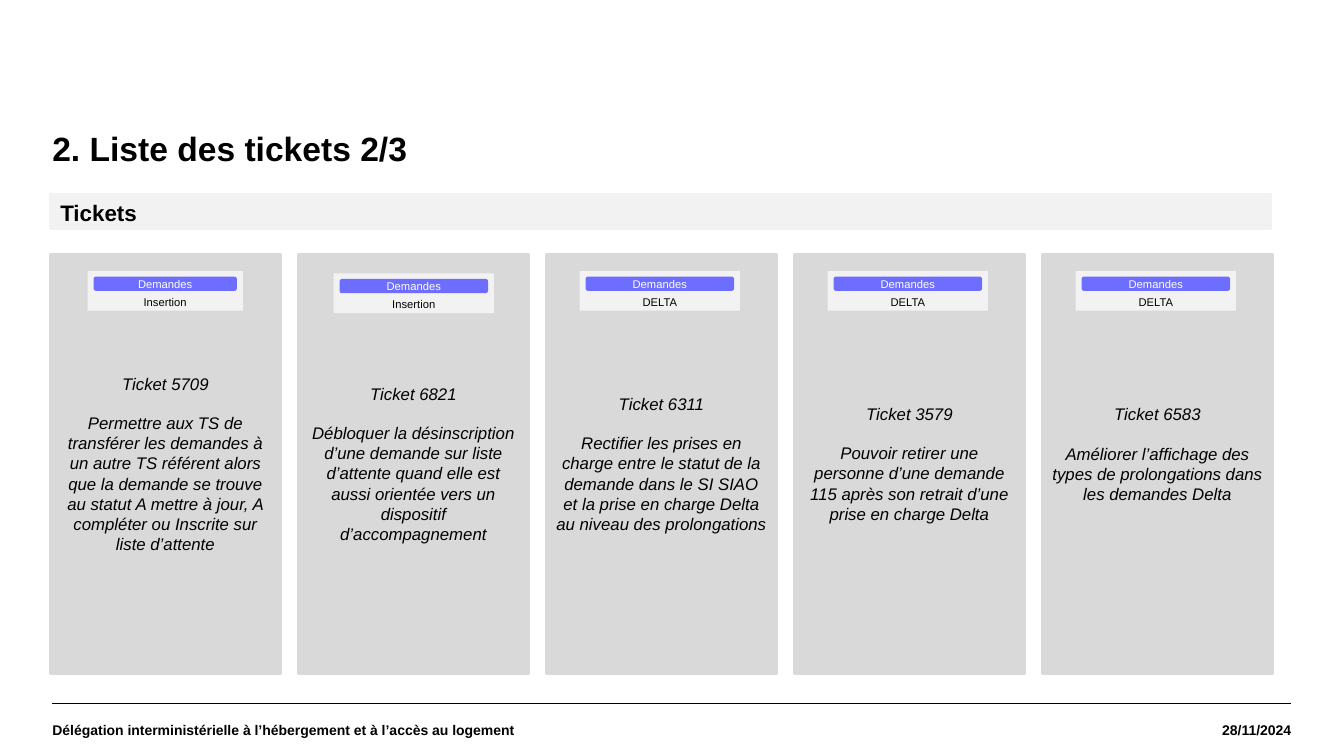
from dataclasses import dataclass

from lxml.etree import SubElement
from pptx import Presentation
from pptx.dml.color import RGBColor
from pptx.enum.shapes import MSO_CONNECTOR, MSO_SHAPE
from pptx.enum.text import MSO_ANCHOR as Anchor, PP_ALIGN as Align
from pptx.oxml.ns import qn
from pptx.util import Cm, Pt

COLORS = {
    "text": "000000",
    "white": "FFFFFF",
    "card": "D9D9D9",
    "band": "F2F2F2",
    "pill": "6D6DFF",
}
FONT = "Arial"
MARGIN = 1.32
RIGHT_EDGE = 32.54
CARD_LEFT, CARD_TOP, CARD_PITCH = 1.27, 6.4, 6.25
CARD_WIDTH, CARD_HEIGHT = 5.8, 10.57
FOOTER_TOP, FOOTER_HEIGHT = 17.73, 1.32
LINE_GAP = Pt(13.8)


@dataclass(frozen=True)
class Badge:
    label: str
    inset: float
    top: float
    width: float
    height: float = 1.0


@dataclass(frozen=True)
class Ticket:
    number: int
    summary: str
    badge: Badge
    bottom_inset: float = 0.13


DELTA = Badge("DELTA", 0.84, 6.83, 4.04)

TICKETS = [
    Ticket(
        5709,
        "Permettre aux TS de transférer les demandes à un autre TS référent alors que "
        "la demande se trouve au statut A mettre à jour, A compléter ou Inscrite sur "
        "liste d’attente",
        Badge("Insertion", 0.94, 6.83, 3.91),
    ),
    Ticket(
        6821,
        "Débloquer la désinscription d’une demande sur liste d’attente quand elle est "
        "aussi orientée vers un dispositif d’accompagnement",
        Badge("Insertion", 0.89, 6.89, 4.04),
    ),
    Ticket(
        6311,
        "Rectifier les prises en charge entre le statut de la demande dans le SI SIAO "
        "et la prise en charge Delta au niveau des prolongations",
        DELTA,
    ),
    Ticket(
        3579,
        "Pouvoir retirer une personne d’une demande 115 après son retrait d’une prise "
        "en charge Delta",
        DELTA,
    ),
    Ticket(
        6583,
        "Améliorer l’affichage des types de prolongations dans les demandes Delta",
        DELTA,
        bottom_inset=0.62,
    ),
]


def rgb(name: str) -> RGBColor:
    return RGBColor.from_string(COLORS[name])


def add_block(shapes, left: float, top: float, width: float, height: float,
              fill: str, kind=MSO_SHAPE.RECTANGLE, outlined: bool = False):
    block = shapes.add_shape(kind, Cm(left), Cm(top), Cm(width), Cm(height))
    block.shadow.inherit = False
    block.fill.solid()
    block.fill.fore_color.rgb = rgb(fill)
    if outlined:
        block.line.color.rgb = rgb(fill)
        block.line.width = Pt(2)
    else:
        block.line.fill.background()
    return block


def write(shape, lines: list[str], size: float, align=Align.LEFT, anchor=Anchor.TOP,
          color: str = "text", bold: bool = False, italic: bool = False,
          flush: bool = False) -> None:
    frame = shape.text_frame
    frame.word_wrap = True
    frame.vertical_anchor = anchor
    if flush:
        frame.margin_left = frame.margin_right = 0
        frame.margin_top = frame.margin_bottom = 0
    for index, line in enumerate(lines):
        paragraph = frame.add_paragraph() if index else frame.paragraphs[0]
        paragraph.text = line
        paragraph.alignment = align
        if index:
            paragraph.space_before = LINE_GAP
        font = paragraph.font
        font.name, font.size = FONT, Pt(size)
        font.bold, font.italic = bold, italic
        font.color.rgb = rgb(color)


def add_label(shapes, left: float, top: float, width: float, height: float):
    return shapes.add_textbox(Cm(left), Cm(top), Cm(width), Cm(height))


def add_badge(slide, badge: Badge, card_left: float) -> None:
    parts = slide.shapes.add_group_shape().shapes
    left = card_left + badge.inset
    add_block(parts, left, badge.top, badge.width, badge.height, "band")
    pill = add_block(parts, left + 0.15, badge.top + 0.14, badge.width - 0.3, 0.36,
                     "pill", MSO_SHAPE.ROUNDED_RECTANGLE)
    write(pill, ["Demandes"], 8, Align.CENTER, Anchor.MIDDLE, "white", flush=True)
    category = add_label(parts, left, badge.top + 0.49, badge.width, 0.51)
    write(category, [badge.label], 8, Align.CENTER)


def add_ticket(slide, ticket: Ticket, left: float) -> None:
    card = add_block(slide.shapes, left, CARD_TOP, CARD_WIDTH, CARD_HEIGHT, "card",
                     outlined=True)
    write(card, [f"Ticket {ticket.number}", ticket.summary], 12, Align.CENTER,
          Anchor.MIDDLE, italic=True)
    card.text_frame.margin_bottom = Cm(ticket.bottom_inset)
    add_badge(slide, ticket.badge, left)


def add_footer(slide) -> None:
    rule = slide.shapes.add_connector(MSO_CONNECTOR.STRAIGHT, Cm(MARGIN), Cm(FOOTER_TOP),
                                      Cm(RIGHT_EDGE), Cm(FOOTER_TOP))
    rule.line.color.rgb = rgb("text")
    rule.line.width = Pt(0.8)
    SubElement(rule._element.spPr, qn("a:effectLst"))
    owner = add_label(slide.shapes, MARGIN, FOOTER_TOP, 21.87, FOOTER_HEIGHT)
    write(owner, ["Délégation interministérielle à l’hébergement et à l’accès au logement"],
          10, anchor=Anchor.MIDDLE, bold=True, flush=True)
    date = add_label(slide.shapes, RIGHT_EDGE - 4.34, FOOTER_TOP, 4.34, FOOTER_HEIGHT)
    write(date, ["28/11/2024"], 10, Align.RIGHT, Anchor.MIDDLE, bold=True, flush=True)


def main() -> None:
    deck = Presentation()
    deck.slide_width, deck.slide_height = Cm(33.87), Cm(19.05)
    slide = deck.slides.add_slide(deck.slide_layouts[6])

    title = add_label(slide.shapes, MARGIN, 3.33, RIGHT_EDGE - MARGIN, 2.67)
    write(title, ["2. Liste des tickets 2/3"], 24, bold=True, flush=True)
    title.text_frame.paragraphs[0].line_spacing = 0.9

    heading = add_block(slide.shapes, CARD_LEFT, 4.9, 30.76, 0.86, "band", outlined=True)
    write(heading, ["Tickets"], 16, bold=True)

    for column, ticket in enumerate(TICKETS):
        add_ticket(slide, ticket, CARD_LEFT + column * CARD_PITCH)
    add_footer(slide)

    deck.save("out.pptx")


if __name__ == "__main__":
    main()
